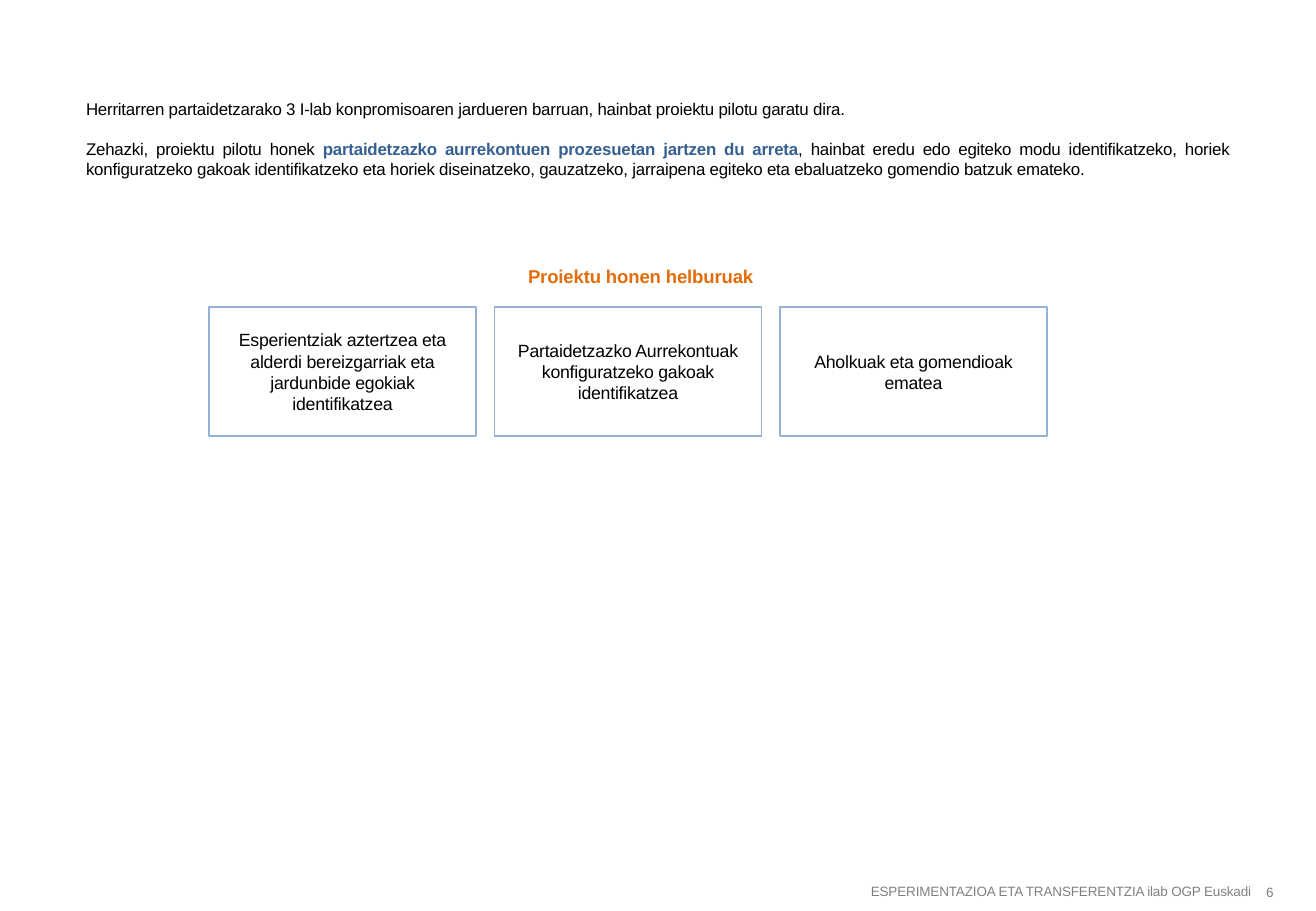
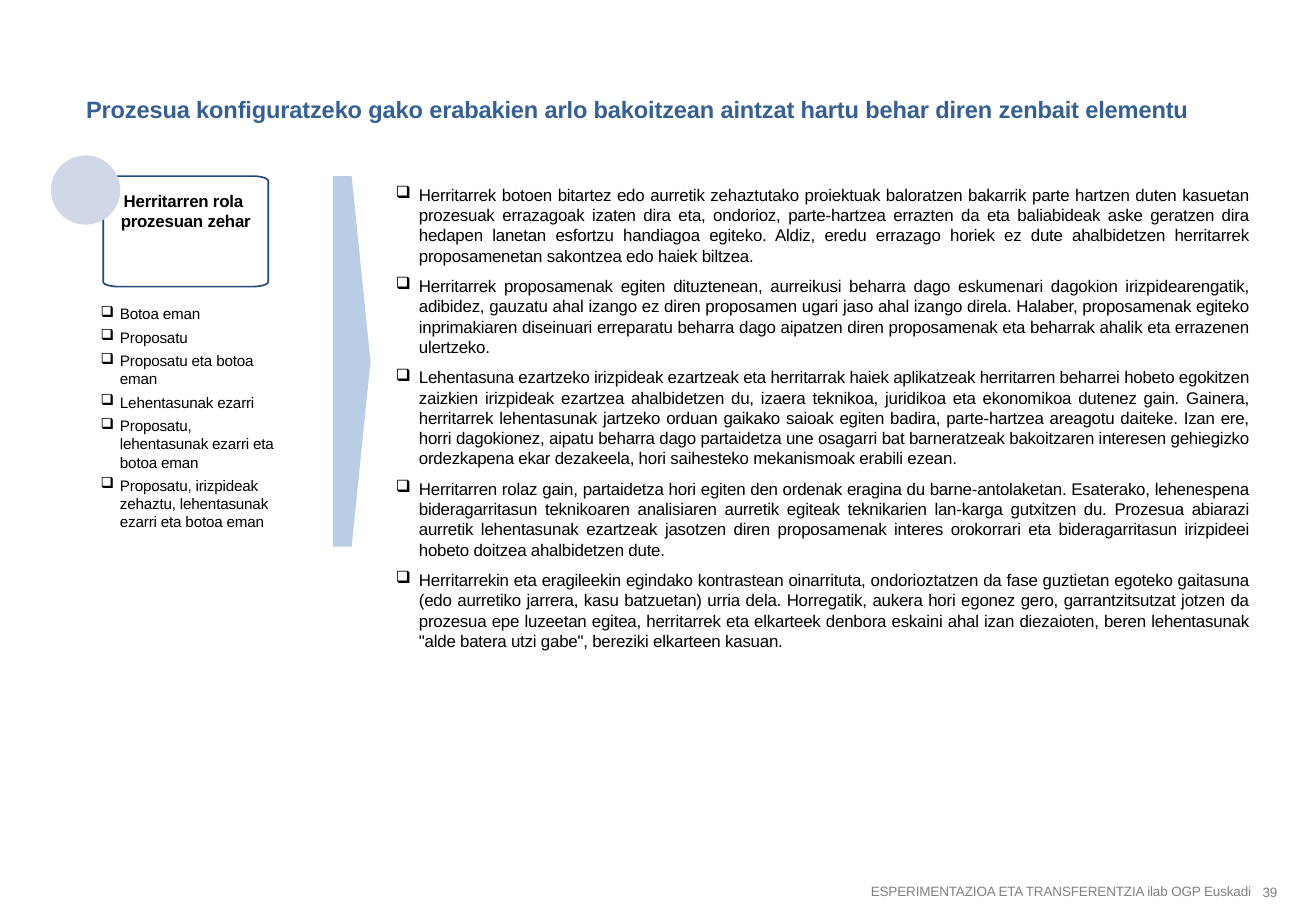
from math import cos, pi, sin

from lxml import etree
from pptx import Presentation
from pptx.dml.color import RGBColor
from pptx.enum.shapes import MSO_SHAPE
from pptx.enum.text import MSO_ANCHOR, PP_ALIGN
from pptx.oxml.ns import qn
from pptx.util import Inches, Pt

RECT, PENTAGON, OVAL = MSO_SHAPE.RECTANGLE, MSO_SHAPE.PENTAGON, MSO_SHAPE.OVAL
LEFT, CENTER, JUSTIFY = PP_ALIGN.LEFT, PP_ALIGN.CENTER, PP_ALIGN.JUSTIFY
TOP, MIDDLE = MSO_ANCHOR.TOP, MSO_ANCHOR.MIDDLE

BLACK = RGBColor(0x00, 0x00, 0x00)
WHITE = RGBColor(0xFF, 0xFF, 0xFF)
GREY = RGBColor(0x80, 0x80, 0x80)
BLUE = RGBColor(0x37, 0x60, 0x92)
NAVY = RGBColor(0x1F, 0x49, 0x7D)
SKY = RGBColor(0x95, 0xB3, 0xD7)
PALE = RGBColor(0xB9, 0xCD, 0xE5)
MIST = RGBColor(0xD0, 0xD8, 0xE8)
ORANGE = RGBColor(0xE4, 0x6C, 0x0A)

COLUMNS, ROWS = 130, 90
FONT = "Arial"
FOOTER = "ESPERIMENTAZIOA ETA TRANSFERENTZIA ilab OGP Euskadi"

GOALS = [
    "Esperientziak aztertzea eta alderdi bereizgarriak eta jardunbide egokiak identifikatzea",
    "Partaidetzazko Aurrekontuak konfiguratzeko gakoak identifikatzea",
    "Aholkuak eta gomendioak ematea",
]
ROLES = [
    "Botoa eman",
    "Proposatu",
    "Proposatu eta botoa eman",
    "Lehentasunak ezarri",
    "Proposatu, lehentasunak ezarri eta botoa eman",
    "Proposatu, irizpideak zehaztu, lehentasunak ezarri eta botoa eman",
]
FINDINGS = [
    "Herritarrek botoen bitartez edo aurretik zehaztutako proiektuak baloratzen bakarrik parte "
    "hartzen duten kasuetan prozesuak errazagoak izaten dira eta, ondorioz, parte-hartzea errazten "
    "da eta baliabideak aske geratzen dira hedapen lanetan esfortzu handiagoa egiteko. Aldiz, eredu "
    "errazago horiek ez dute ahalbidetzen herritarrek proposamenetan sakontzea edo haiek biltzea.",
    "Herritarrek proposamenak egiten dituztenean, aurreikusi beharra dago eskumenari dagokion "
    "irizpidearengatik, adibidez, gauzatu ahal izango ez diren proposamen ugari jaso ahal izango "
    "direla. Halaber, proposamenak egiteko inprimakiaren diseinuari erreparatu beharra dago aipatzen "
    "diren proposamenak eta beharrak ahalik eta errazenen ulertzeko.",
    "Lehentasuna ezartzeko irizpideak ezartzeak eta herritarrak haiek aplikatzeak herritarren "
    "beharrei hobeto egokitzen zaizkien irizpideak ezartzea ahalbidetzen du, izaera teknikoa, "
    "juridikoa eta ekonomikoa dutenez gain. Gainera, herritarrek lehentasunak jartzeko orduan "
    "gaikako saioak egiten badira, parte-hartzea areagotu daiteke. Izan ere, horri dagokionez, "
    "aipatu beharra dago partaidetza une osagarri bat barneratzeak bakoitzaren interesen gehiegizko "
    "ordezkapena ekar dezakeela, hori saihesteko mekanismoak erabili ezean.",
    "Herritarren rolaz gain, partaidetza hori egiten den ordenak eragina du barne-antolaketan. "
    "Esaterako, lehenespena bideragarritasun teknikoaren analisiaren aurretik egiteak teknikarien "
    "lan-karga gutxitzen du. Prozesua abiarazi aurretik lehentasunak ezartzeak jasotzen diren "
    "proposamenak interes orokorrari eta bideragarritasun irizpideei hobeto doitzea ahalbidetzen dute.",
    "Herritarrekin eta eragileekin egindako kontrastean oinarrituta, ondorioztatzen da fase guztietan "
    "egoteko gaitasuna (edo aurretiko jarrera, kasu batzuetan) urria dela. Horregatik, aukera hori "
    "egonez gero, garrantzitsutzat jotzen da prozesua epe luzeetan egitea, herritarrek eta elkarteek "
    "denbora eskaini ahal izan diezaioten, beren lehentasunak \"alde batera utzi gabe\", bereziki "
    "elkarteen kasuan.",
]


class Deck:
    """Draws styled elements on the current slide, placed in grid columns and rows."""

    def __init__(self):
        self.prs = Presentation()
        self.cell = Inches(1) / 12
        self.prs.slide_width = self.emu(COLUMNS)
        self.prs.slide_height = self.emu(ROWS)

    def emu(self, cells):
        return round(cells * self.cell)

    def box(self, at):
        return [self.emu(v) for v in at]

    def slide(self, number):
        self.s = self.prs.slides.add_slide(self.prs.slide_layouts[6])
        for at, tx in (((83.28, 86.52, 43.08, 3), FOOTER), ((122.64, 87, 5.64, 2.28), str(number))):
            self.text(at, [tx], 8, GREY, align=CENTER, anchor=MIDDLE)

    def fill_text(self, sp, paragraphs, size, color=BLACK, bold=False, align=LEFT,
                  anchor=TOP, inset=(1.2, 0.6), after=0, indent=0):
        tf = sp.text_frame
        tf.word_wrap = True
        tf.vertical_anchor = anchor
        tf.margin_left = tf.margin_right = self.emu(inset[0])
        tf.margin_top = tf.margin_bottom = self.emu(inset[1])
        for i, runs in enumerate(paragraphs):
            p = tf.add_paragraph() if i else tf.paragraphs[0]
            p.alignment = align
            p.space_after = Pt(after)
            if indent:
                self.bullet(p, indent)
            for tx, c, b in [(runs, color, bold)] if isinstance(runs, str) else runs:
                r = p.add_run()
                r.text = tx
                r.font.name, r.font.size = FONT, Pt(size)
                r.font.bold, r.font.color.rgb = b, c
                r._r.get_or_add_rPr().set("spc", "-10")

    def bullet(self, p, indent):
        pPr = p._p.get_or_add_pPr()
        pPr.set("marL", str(self.emu(indent)))
        pPr.set("indent", str(-self.emu(indent)))
        etree.SubElement(pPr, qn("a:buChar")).set("char", "❑")

    def text(self, at, paragraphs, size, color=BLACK, **style):
        self.fill_text(self.s.shapes.add_textbox(*self.box(at)), paragraphs, size, color, **style)

    def paint(self, sp, fill=None, line=None):
        sp.shadow.inherit = False
        if fill is None:
            sp.fill.background()
        else:
            sp.fill.solid()
            sp.fill.fore_color.rgb = fill
        if line is None:
            sp.line.fill.background()
        else:
            sp.line.color.rgb = line
            sp.line.width = Pt(1)
        return sp

    def shape(self, kind, at, fill=None, line=None):
        return self.paint(self.s.shapes.add_shape(kind, *self.box(at)), fill, line)

    def soft_box(self, at, rx, ry, fill, line):
        x, y, w, h = at
        centres = [(x + w - rx, y + h - ry), (x + rx, y + h - ry),
                   (x + rx, y + ry), (x + w - rx, y + ry)]
        points = []
        for quarter, (cx, cy) in enumerate(centres):
            for step in range(9):
                a = (quarter + step / 8) * pi / 2
                points.append((self.emu(cx + rx * cos(a)), self.emu(cy + ry * sin(a))))
        fb = self.s.shapes.build_freeform(*points[0])
        fb.add_line_segments(points[1:], close=True)
        return self.paint(fb.convert_to_shape(), fill, line)


def goals_slide(deck):
    deck.slide(6)
    deck.text((7.32, 9.12, 115.32, 9.24), [
        "Herritarren partaidetzarako 3 I-lab konpromisoaren jardueren barruan, "
        "hainbat proiektu pilotu garatu dira.",
        [("Zehazki, proiektu pilotu honek ", BLACK, False),
         ("partaidetzazko aurrekontuen prozesuetan jartzen du arreta", BLUE, True),
         (", hainbat eredu edo egiteko modu identifikatzeko, horiek konfiguratzeko gakoak "
          "identifikatzeko eta horiek diseinatzeko, gauzatzeko, jarraipena egiteko eta "
          "ebaluatzeko gomendio batzuk emateko.", BLACK, False)],
    ], 10, align=JUSTIFY, after=12)
    for i, goal in enumerate(GOALS):
        sp = deck.shape(RECT, (20.64 + 28.2 * i, 30.36, 26.4, 12.72), line=SKY)
        deck.fill_text(sp, [goal], 10.5, align=CENTER, anchor=MIDDLE, inset=(1.92, 1.44))
    deck.text((31.92, 25.56, 62.76, 3.48), ["Proiektu honen helburuak"], 11, ORANGE,
              bold=True, align=CENTER)


def roles_slide(deck):
    deck.slide(39)
    deck.text((8.76, 29.52, 20.4, 21.24), ROLES, 9, after=3, indent=1.92)
    deck.shape(PENTAGON, (32.88, 17.4, 3.72, 36.6), PALE)
    deck.text((37.92, 17.64, 86.64, 47.64), FINDINGS, 10, align=JUSTIFY, after=6, indent=2.28)
    sp = deck.soft_box((10.2, 17.4, 16.3, 10.92), 1.56, 0.48, WHITE, NAVY)
    deck.fill_text(sp, ["Herritarren rola ", "prozesuan zehar"], 10, bold=True,
                   align=CENTER, inset=(1.44, 1.44))
    deck.text((7.32, 8.76, 116.28, 4.08), [
        "Prozesua konfiguratzeko gako erabakien arlo bakoitzean aintzat hartu behar "
        "diren zenbait elementu"], 14, BLUE, bold=True, align=JUSTIFY)
    deck.shape(OVAL, (5.04, 15.36, 6.84, 6.84), MIST)


def main():
    deck = Deck()
    goals_slide(deck)
    roles_slide(deck)
    deck.prs.save("out.pptx")


if __name__ == "__main__":
    main()
